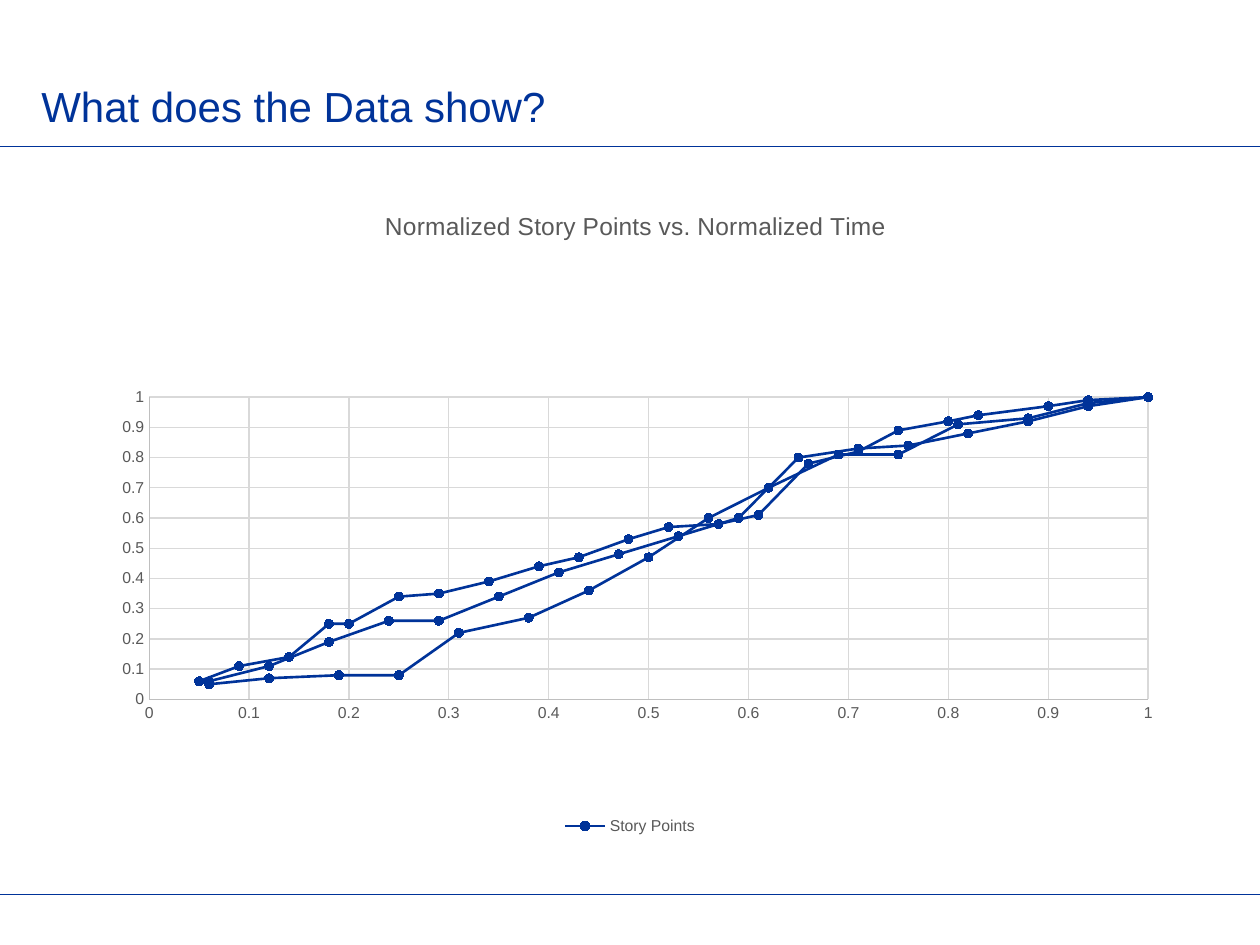
"""Build a slide with a scatter chart of normalized story points over time."""
from lxml import etree
from pptx import Presentation
from pptx.chart.data import XyChartData
from pptx.dml.color import RGBColor
from pptx.enum import chart as c, shapes, text as t
from pptx.oxml import ns
from pptx.util import Inches, Pt

NAVY = RGBColor(0x00, 0x33, 0x99)
GRAY = RGBColor(0x59, 0x59, 0x59)
AXIS_GRAY = RGBColor(0xBF, 0xBF, 0xBF)
GRID_GRAY = RGBColor(0xD9, 0xD9, 0xD9)
FONT = "Arial"

TITLE = "What does the Data show?"
CHART_TITLE = "Normalized Story Points vs. Normalized Time"
SERIES_NAME = "Story Points"
RULE_TOPS = (1.16, 7.1)


def even_times(count):
    return [round(step / count, 2) for step in range(1, count + 1)]


PROJECTS = [
    ([0.05, 0.09, 0.14, 0.18, 0.2, 0.25, 0.29, 0.34, 0.39, 0.43, 0.48,
      0.52, 0.57, 0.61, 0.66, 0.71, 0.75, 0.8, 0.83, 0.9, 0.94, 1],
     [0.06, 0.11, 0.14, 0.25, 0.25, 0.34, 0.35, 0.39, 0.44, 0.47, 0.53,
      0.57, 0.58, 0.61, 0.78, 0.82, 0.89, 0.92, 0.94, 0.97, 0.99, 1]),
    (even_times(16),
     [0.05, 0.07, 0.08, 0.08, 0.22, 0.27, 0.36, 0.47, 0.6, 0.7, 0.81,
      0.81, 0.91, 0.93, 0.98, 1]),
    (even_times(17),
     [0.06, 0.11, 0.19, 0.26, 0.26, 0.34, 0.42, 0.48, 0.54, 0.6, 0.8,
      0.83, 0.84, 0.88, 0.92, 0.97, 1]),
]


def set_font(font, size, color):
    font.name, font.size, font.bold = FONT, Pt(size), False
    font.color.rgb = color


def set_line(line, color, width):
    line.color.rgb = color
    line.width = Pt(width)


def write_text(frame, words, *, size, color):
    paragraph = frame.paragraphs[0]
    run = paragraph.add_run()
    run.text = words
    set_font(run.font, size, color)


def add_rule(slide, top):
    rule = slide.shapes.add_connector(
        shapes.MSO_CONNECTOR.STRAIGHT, 0, Inches(top), Inches(10), Inches(top))
    set_line(rule.line, NAVY, 0.5)
    etree.SubElement(rule.line._get_or_add_ln().getparent(), ns.qn("a:effectLst"))


def set_layout(parent, position, **values):
    for old in parent.findall(ns.qn("c:layout")):
        parent.remove(old)
    layout = etree.Element(ns.qn("c:layout"))
    parent.insert(position, layout)
    manual = etree.SubElement(layout, ns.qn("c:manualLayout"))
    for tag, value in values.items():
        etree.SubElement(manual, ns.qn(f"c:{tag}")).set("val", str(value))


def format_axis(axis):
    axis.minimum_scale, axis.maximum_scale, axis.major_unit = 0, 1, 0.1
    axis.major_tick_mark = axis.minor_tick_mark = c.XL_TICK_MARK.NONE
    axis.has_major_gridlines = True
    set_line(axis.major_gridlines.format.line, GRID_GRAY, 0.75)
    set_line(axis.format.line, AXIS_GRAY, 0.75)
    set_font(axis.tick_labels.font, 9, GRAY)
    axis.tick_labels.number_format = "General"
    axis.tick_labels.number_format_is_linked = False


def add_story_chart(slide):
    data = XyChartData()
    points = data.add_series(SERIES_NAME)
    for index, (times, scores) in enumerate(PROJECTS):
        if index:
            points.add_data_point(0, None)
        for time, score in zip(times, scores):
            points.add_data_point(time, score)
    chart = slide.shapes.add_chart(
        c.XL_CHART_TYPE.XY_SCATTER_LINES, Inches(0.5), Inches(1.42),
        Inches(9), Inches(5.25), data).chart
    chart.font.name, chart.font.size = FONT, Pt(10)

    plot = chart.plots[0]
    plot.vary_by_categories = False
    series = plot.series[0]
    series.smooth = False
    set_line(series.format.line, NAVY, 1.5)
    series.marker.style, series.marker.size = c.XL_MARKER_STYLE.CIRCLE, 5
    series.marker.format.fill.solid()
    series.marker.format.fill.fore_color.rgb = NAVY
    set_line(series.marker.format.line, NAVY, 0.75)
    for point in list(series._element.iter(ns.qn("c:pt"))):
        if point.findtext(ns.qn("c:v")) in ("None", ""):
            point.getparent().remove(point)

    format_axis(chart.category_axis)
    format_axis(chart.value_axis)
    chart.has_legend = True
    chart.legend.position = c.XL_LEGEND_POSITION.BOTTOM
    chart.legend.include_in_layout = False
    set_font(chart.legend.font, 9, GRAY)

    chart.has_title = True
    write_text(chart.chart_title.text_frame, CHART_TITLE, size=14, color=GRAY)
    set_layout(chart.chart_title._element, 1,
               xMode="edge", yMode="edge", x=0.28, y=0.04)
    set_layout(plot._element.getparent(), 0, layoutTarget="inner",
               xMode="edge", yMode="edge", x=0.076, y=0.33, w=0.881, h=0.457)


def main():
    presentation = Presentation()
    presentation.slide_width, presentation.slide_height = Inches(10), Inches(7.5)
    slide = presentation.slides.add_slide(presentation.slide_layouts[6])
    for top in RULE_TOPS:
        add_rule(slide, top)
    title = slide.shapes.add_textbox(
        Inches(0.23), Inches(0.15), Inches(8.28), Inches(0.94))
    title.text_frame.word_wrap = True
    title.text_frame.vertical_anchor = t.MSO_ANCHOR.BOTTOM
    write_text(title.text_frame, TITLE, size=24, color=NAVY)
    add_story_chart(slide)
    presentation.save("out.pptx")


if __name__ == "__main__":
    main()
